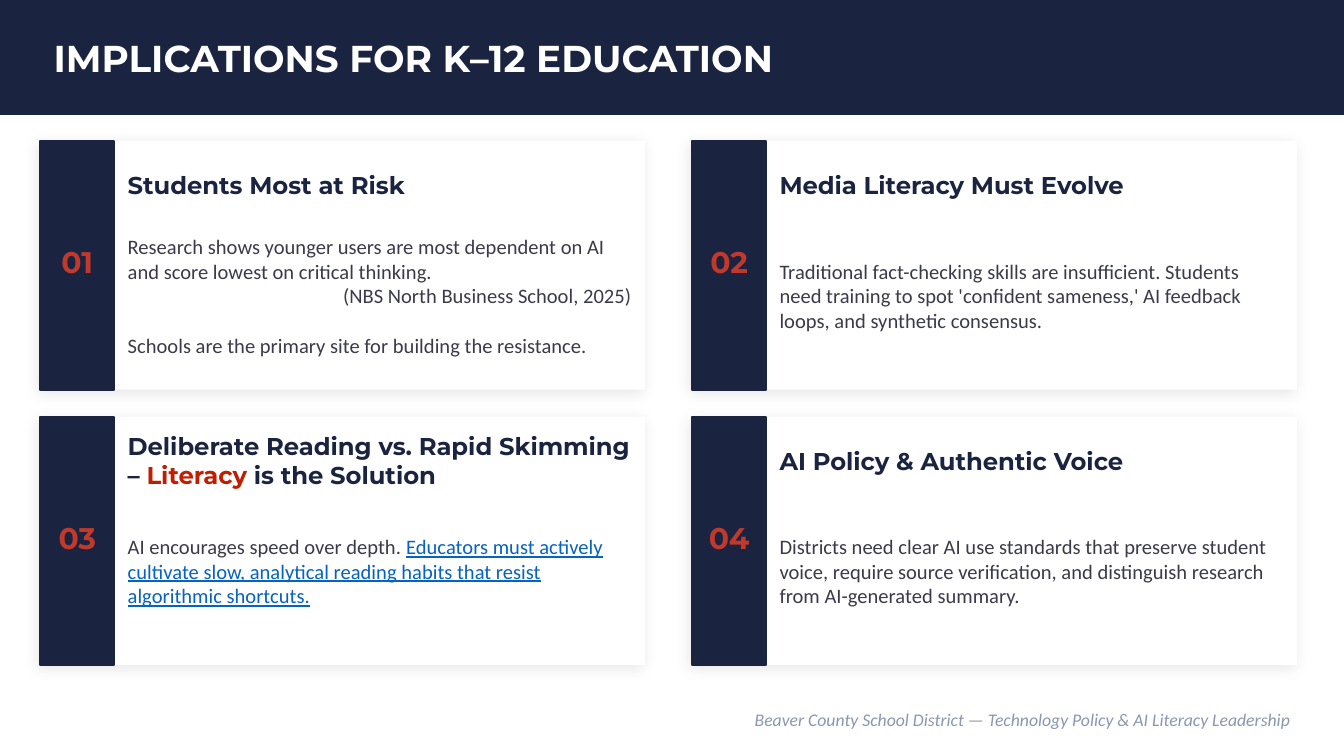
from lxml import etree
from pptx import Presentation
from pptx.dml.color import RGBColor
from pptx.enum.shapes import MSO_SHAPE
from pptx.enum.text import MSO_ANCHOR, PP_ALIGN
from pptx.oxml.ns import qn
from pptx.util import Pt

RECT = MSO_SHAPE.RECTANGLE
MIDDLE = MSO_ANCHOR.MIDDLE
LEFT, CENTER, RIGHT = PP_ALIGN.LEFT, PP_ALIGN.CENTER, PP_ALIGN.RIGHT

NAVY = RGBColor(0x1A, 0x23, 0x40)
WHITE = RGBColor(0xFF, 0xFF, 0xFF)
RED = RGBColor(0xC0, 0x39, 0x2B)
ACCENT = RGBColor(0xC0, 0x1E, 0x00)
INK = RGBColor(0x3A, 0x3A, 0x4A)
LINK_BLUE = RGBColor(0x05, 0x63, 0xC1)
MUTED = RGBColor(0x8A, 0x97, 0xB0)

CARD_W, CARD_H = 324, 133.2
CARD_LEFT, CARD_TOP = 21.6, 75.6
STEP_X, STEP_Y = 349.2, 147.6
BAND_W = 39.6
TEXT_X, TEXT_W = 46.8, 270


def add_run(p, text, size=11, font="Calibri", color=INK,
            bold=False, italic=False, underline=False):
    r = p.add_run()
    r.text = text
    f = r.font
    f.size = Pt(size)
    f.name = font
    f.color.rgb = color
    f.bold = bold
    f.italic = italic
    f.underline = underline


class Deck:
    title = dict(size=20, font="Montserrat", color=WHITE, bold=True)
    number = dict(size=16, font="Montserrat", color=RED, bold=True)
    heading = dict(size=13, font="Montserrat", color=NAVY, bold=True)
    body = dict(size=11, font="Calibri", color=INK)
    footer = dict(size=9.5, font="Calibri", color=MUTED, italic=True)

    def __init__(self, prs):
        self.s = prs.slides.add_slide(prs.slide_layouts[6])

    def rect(self, x, y, w, h, fill, outlined=True):
        sp = self.s.shapes.add_shape(RECT, Pt(x), Pt(y), Pt(w), Pt(h))
        sp.shadow.inherit = False
        sp.fill.solid()
        sp.fill.fore_color.rgb = fill
        if outlined:
            sp.line.color.rgb = fill
            sp.line.width = Pt(1)
        else:
            sp.line.fill.background()
        return sp

    def cast_shadow(self, sp):
        effects = sp.element.spPr.find(qn("a:effectLst"))
        shadow = etree.SubElement(
            effects, qn("a:outerShdw"), blurRad=str(Pt(8)), dist=str(Pt(2)),
            dir=str(135 * 60000), algn="bl", rotWithShape="0")
        color = etree.SubElement(shadow, qn("a:srgbClr"), val="000000")
        etree.SubElement(color, qn("a:alpha"), val="10000")

    def text(self, x, y, w, h, paragraphs, style, align=LEFT, inset=(0, 0)):
        tb = self.s.shapes.add_textbox(Pt(x), Pt(y), Pt(w), Pt(h))
        tf = tb.text_frame
        tf.word_wrap = True
        tf.vertical_anchor = MIDDLE
        tf.margin_left = tf.margin_right = Pt(inset[0])
        tf.margin_top = tf.margin_bottom = Pt(inset[1])
        for i, para in enumerate(paragraphs):
            p = tf.paragraphs[0] if i == 0 else tf.add_paragraph()
            p.alignment = para.get("align", align)
            p.space_before = Pt(para.get("before", 0))
            for text, changes in para["runs"]:
                add_run(p, text, **{**style, **changes})

    def card(self, index, heading, body):
        row, col = divmod(index, 2)
        x, y = CARD_LEFT + col * STEP_X, CARD_TOP + row * STEP_Y
        self.cast_shadow(self.rect(x, y, CARD_W, CARD_H, WHITE, outlined=False))
        self.rect(x, y, BAND_W, CARD_H, NAVY)
        self.text(x + 1.44, y + 39.6, 36.72, 50.4, [para(f"{index + 1:02}")],
                  self.number, CENTER)
        self.text(x + TEXT_X, y + 7.2, TEXT_W, 32.4, heading, self.heading)
        self.text(x + TEXT_X, y + 39.6, TEXT_W, 86.4, body, self.body)


def para(*runs, **layout):
    return dict(runs=[(r, {}) if isinstance(r, str) else r for r in runs], **layout)


CARDS = [
    ([para("Students Most at Risk")],
     [para("Research shows younger users are most dependent on AI "
           "and score lowest on critical thinking."),
      para("(NBS North Business School, 2025)", align=RIGHT),
      para("Schools are the primary site for building the resistance.", before=13.4)]),
    ([para("Media Literacy Must Evolve")],
     [para("Traditional fact-checking skills are insufficient. Students need "
           "training to spot 'confident sameness,' AI feedback loops, and "
           "synthetic consensus.")]),
    ([para("Deliberate Reading vs. Rapid Skimming – ",
           ("Literacy", dict(color=ACCENT)), " is the Solution")],
     [para("AI encourages speed over depth. ",
           ("Educators must actively cultivate slow, analytical reading habits "
            "that resist algorithmic shortcuts.",
            dict(color=LINK_BLUE, underline=True)))]),
    ([para("AI Policy & Authentic Voice")],
     [para("Districts need clear AI use standards that preserve student voice, "
           "require source verification, and distinguish research from "
           "AI-generated summary.")]),
]


def main():
    prs = Presentation()
    prs.slide_width, prs.slide_height = Pt(720), Pt(405)
    deck = Deck(prs)
    deck.rect(0, 0, 720, 61.2, NAVY)
    deck.text(28.8, 8.64, 662.4, 44.64, [para("IMPLICATIONS FOR K–12 EDUCATION")],
              deck.title)
    for i, (heading, body) in enumerate(CARDS):
        deck.card(i, heading, body)
    deck.text(21.6, 374.4, 676.8, 21.6,
              [para("Beaver County School District — "
                    "Technology Policy & AI Literacy Leadership")],
              deck.footer, RIGHT, inset=(7.2, 3.6))
    prs.save("out.pptx")


if __name__ == "__main__":
    main()
